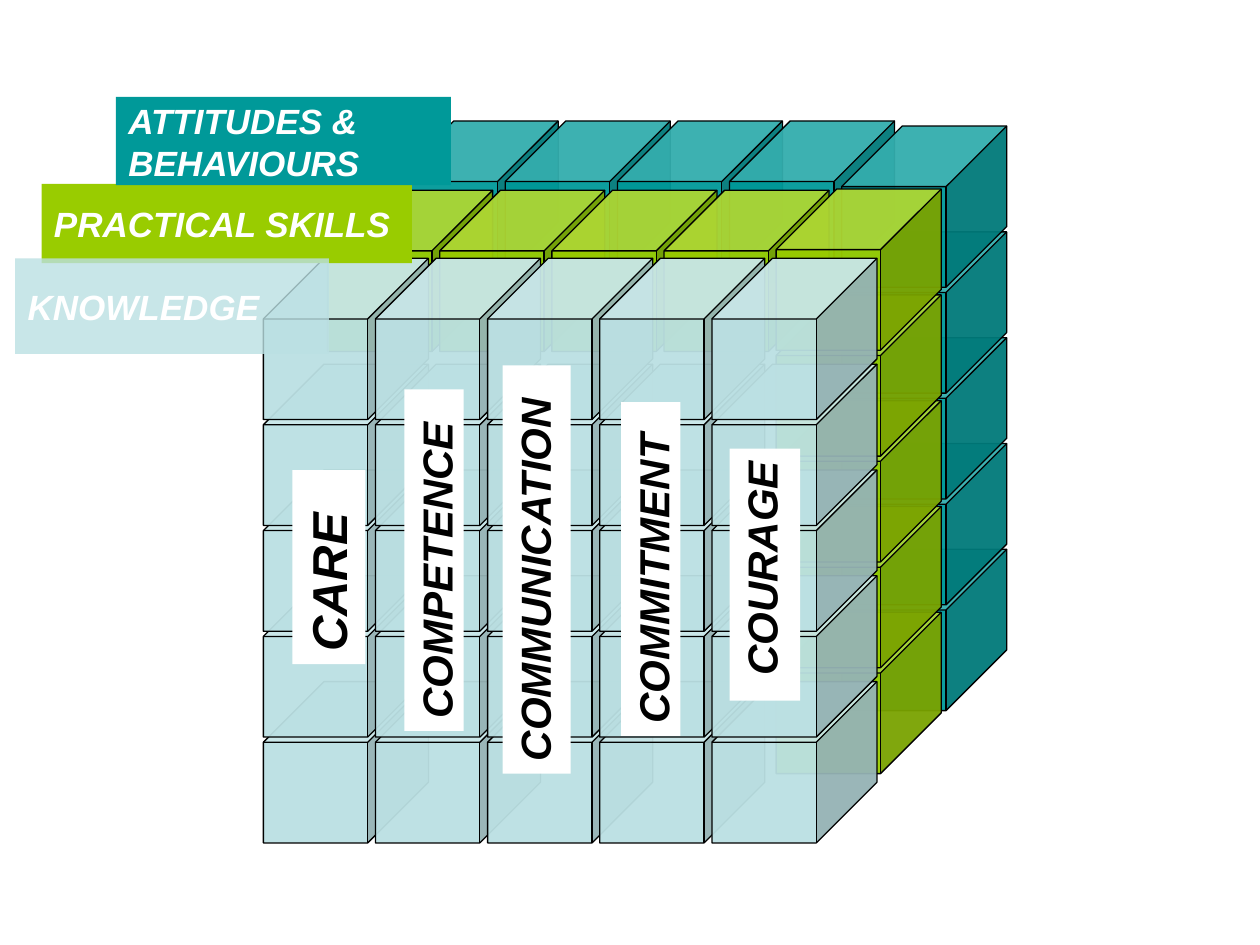
import pptx
import pptx.util
import pptx.dml.color
import pptx.enum.shapes
import pptx.enum.text
from lxml import etree

Inches = pptx.util.Inches
SHAPES = pptx.enum.shapes.MSO_SHAPE
ANCHOR = pptx.enum.text.MSO_ANCHOR
ALIGN = pptx.enum.text.PP_ALIGN

TEAL, GREEN, PALE = "009999", "99CC00", "BBE0E3"
BLACK, WHITE = "000000", "FFFFFF"


def colour(value):
    return pptx.dml.color.RGBColor.from_string(value)


class Painter:
    """Holds the style and the current slide."""

    font = {"name": "Arial", "bold": True, "italic": True}
    cube_size = (1.31, 1.28)
    cube_depth = 0.376
    column_step = 0.89
    row_step = 0.84
    count = 5

    def __init__(self, slide):
        self.slide = slide

    def shape(self, parent, kind, place, fill, opacity=100):
        shape = parent.shapes.add_shape(kind, *[Inches(length) for length in place])
        shape.shadow.inherit = False
        shape.fill.solid()
        shape.fill.fore_color.rgb = colour(fill)
        if opacity < 100:
            tone = shape.fill._xPr.solidFill[0]
            etree.SubElement(tone, pptx.oxml.ns.qn("a:alpha"), val=str(opacity * 1000))
        return shape

    def cube(self, group, left, top, fill):
        cube = self.shape(group, SHAPES.CUBE, (left, top, *self.cube_size), fill, 95)
        cube.adjustments[0] = self.cube_depth
        cube.line.color.rgb = colour(BLACK)
        cube.line.width = pptx.util.Pt(0.75)

    def layer(self, left, row_top, column_top, fill, full):
        """Draw a wall of cubes: either all of it, or its top row and right column."""
        group = self.slide.shapes.add_group_shape()
        last = self.count - 1
        if not full:
            for column in range(last):
                self.cube(group, left + column * self.column_step, row_top, fill)
        for row in reversed(range(self.count)):
            for column in range(0 if full else last, self.count):
                self.cube(group, left + column * self.column_step,
                          column_top + row * self.row_step, fill)

    def label(self, place, lines, fill, ink, size, opacity=100, rotation=0,
              anchor=ANCHOR.MIDDLE, align=ALIGN.LEFT):
        box = self.shape(self.slide, SHAPES.RECTANGLE, place, fill, opacity)
        box.line.fill.background()
        box.rotation = rotation
        frame = box.text_frame
        frame.word_wrap = True
        frame.vertical_anchor = anchor
        for index, line in enumerate(lines):
            para = frame.paragraphs[0] if index == 0 else frame.add_paragraph()
            para.alignment = align
            span = para.add_run()
            span.text = line
            for key, value in self.font.items():
                setattr(span.font, key, value)
            span.font.size = pptx.util.Pt(size)
            span.font.color.rgb = colour(ink)


def main():
    deck = pptx.Presentation()
    deck.slide_width, deck.slide_height = Inches(10), Inches(7.5)
    painter = Painter(deck.slides.add_slide(deck.slide_layouts[6]))

    # Walls of cubes, from back to front
    painter.layer(3.12, 0.96, 1.0, TEAL, full=False)
    painter.layer(2.6, 1.51, 1.5, GREEN, full=False)
    painter.layer(2.09, 2.05, 2.05, PALE, full=True)

    # Upright labels on the front columns
    columns = [
        ("CARE", (1.84, 4.21, 1.54, 0.58), 28, ALIGN.LEFT),
        ("COMPETENCE", (2.09, 4.21, 2.71, 0.47), 24, ALIGN.LEFT),
        ("COMMUNICATION", (2.64, 4.25, 3.24, 0.54), 24, ALIGN.LEFT),
        ("COMMITMENT", (3.84, 4.28, 2.65, 0.47), 24, ALIGN.LEFT),
        ("COURAGE", (5.07, 4.28, 2, 0.56), 24, ALIGN.RIGHT),
    ]
    for name, place, size, align in columns:
        painter.label(place, [name], WHITE, BLACK, size, rotation=270,
                      anchor=ANCHOR.TOP, align=align)

    # Labels of the three layers
    layers = [
        (["PRACTICAL SKILLS"], (0.33, 1.46, 2.94, 0.63), GREEN, 100),
        (["ATTITUDES &", "BEHAVIOURS"], (0.92, 0.77, 2.66, 0.7), TEAL, 100),
        (["KNOWLEDGE"], (0.12, 2.05, 2.49, 0.76), PALE, 80),
    ]
    for lines, place, fill, opacity in layers:
        painter.label(place, lines, fill, WHITE, 20, opacity)

    deck.save("out.pptx")


if __name__ == "__main__":
    main()
